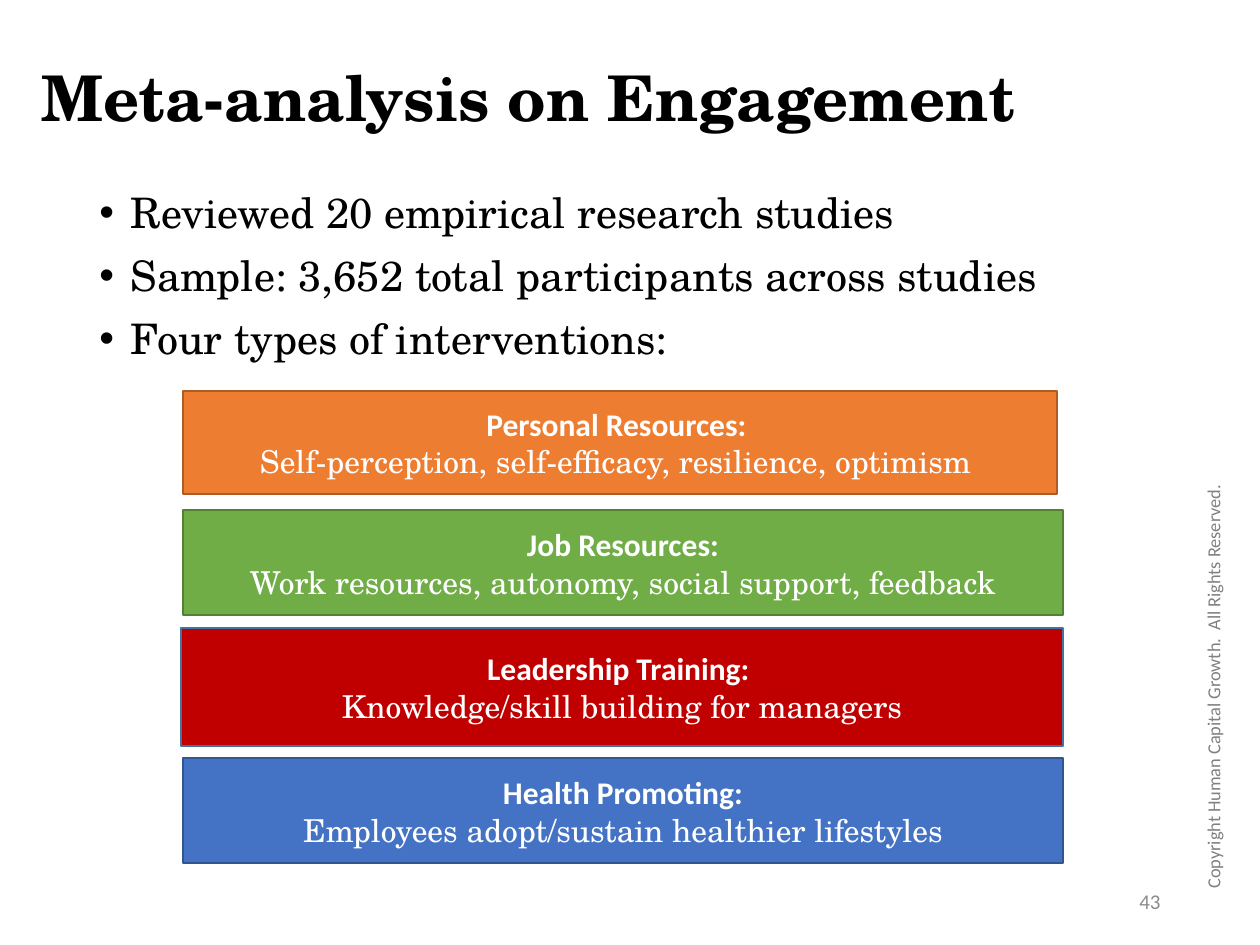
"""Build the slide on the engagement meta-analysis and its four interventions."""
from lxml.etree import SubElement
from pptx import Presentation
from pptx.dml.color import RGBColor
from pptx.enum.shapes import MSO_SHAPE
from pptx.enum.text import MSO_ANCHOR as ANCHOR, MSO_AUTO_SIZE as AUTO, PP_ALIGN as ALIGN
from pptx.oxml.ns import qn
from pptx.util import Emu, Pt

SERIF, SANS = "TeX Gyre Schola", "Calibri"
COLORS = {
    "text": "000000", "copyright": "808080", "number": "8C8C8C", "white": "FFFFFF",
    "personal": "ED7D31", "personal_edge": "AF5C24",
    "job": "70AD47", "job_edge": "538035",
    "leadership": "C00000", "leadership_edge": "43739E",
    "health": "4472C4", "health_edge": "325491",
}


def px(*lengths):
    return [Emu(round(length * 914400 / 126)) for length in lengths]


def write(paragraph, text, size, font, color, bold=False, align=ALIGN.LEFT):
    paragraph.alignment = align
    run = paragraph.add_run()
    run.text = text
    run.font.size, run.font.name, run.font.bold = Pt(size), font, bold
    run.font.color.rgb = RGBColor.from_string(COLORS[color])


prs = Presentation()
prs.slide_width, prs.slide_height = px(1260, 945)
slide = prs.slides.add_slide(prs.slide_layouts[5])
shapes = slide.shapes

title = shapes.title
title.left, title.top, title.width, title.height = px(29, 10, 1144, 183)
title.text_frame.word_wrap = True
title.text_frame.auto_size = AUTO.NONE
title.text_frame.vertical_anchor = ANCHOR.MIDDLE
heading = title.text_frame.paragraphs[0]
heading.line_spacing = 0.9
write(heading, "Meta-analysis on Engagement", 36, SERIF, "text", bold=True)

copyright_line = shapes.add_textbox(*px(982, 645, 462, 50))
copyright_line.rotation = 270
copyright_line.text_frame.word_wrap = True
copyright_line.text_frame.vertical_anchor = ANCHOR.MIDDLE
write(copyright_line.text_frame.paragraphs[0],
      "Copyright Human Capital Growth.  All Rights Reserved.", 10.5, SANS, "copyright")

findings = shapes.add_textbox(*px(87, 186, 1068, 189)).text_frame
findings.word_wrap = True
for i, finding in enumerate([
    "Reviewed 20 empirical research studies",
    "Sample: 3,652 total participants across studies",
    "Four types of interventions:",
]):
    bullet = findings.add_paragraph() if i else findings.paragraphs[0]
    bullet.line_spacing = 0.9
    if i:
        bullet.space_before = Pt(10)
    props = bullet._p.get_or_add_pPr()
    props.set("marL", "228600")
    props.set("indent", "-228600")
    SubElement(props, qn("a:buFont"), typeface="Arial")
    SubElement(props, qn("a:buChar"), char="•")
    write(bullet, finding, 24, SERIF, "text")

page_number = shapes.add_textbox(*px(890, 876, 283, 50)).text_frame
page_number.word_wrap = True
page_number.vertical_anchor = ANCHOR.MIDDLE
write(page_number.paragraphs[0], "43", 12, SANS, "number", align=ALIGN.RIGHT)

interventions = [
    ("personal", (183, 391, 874, 103), "Personal Resources: ",
     "Self-perception, self-efficacy, resilience, optimism "),
    ("job", (183, 510, 880, 105), "Job Resources:",
     "Work resources, autonomy, social support, feedback"),
    ("leadership", (181, 628, 882, 118), "Leadership Training: ",
     "Knowledge/skill building for managers"),
    ("health", (183, 758, 880, 105), "Health Promoting:",
     "Employees adopt/sustain healthier lifestyles"),
]
for key, bounds, name, examples in interventions:
    band = shapes.add_shape(MSO_SHAPE.FLOWCHART_PROCESS, *px(*bounds))
    band.shadow.inherit = False
    band.fill.solid()
    band.fill.fore_color.rgb = RGBColor.from_string(COLORS[key])
    band.line.color.rgb = RGBColor.from_string(COLORS[f"{key}_edge"])
    band.line.width = Pt(1)
    label = band.text_frame
    label.word_wrap = True
    label.vertical_anchor = ANCHOR.MIDDLE
    write(label.paragraphs[0], name, 18, SANS, "white", bold=True, align=ALIGN.CENTER)
    write(label.add_paragraph(), examples, 18, SERIF, "white", align=ALIGN.CENTER)

prs.save("out.pptx")
